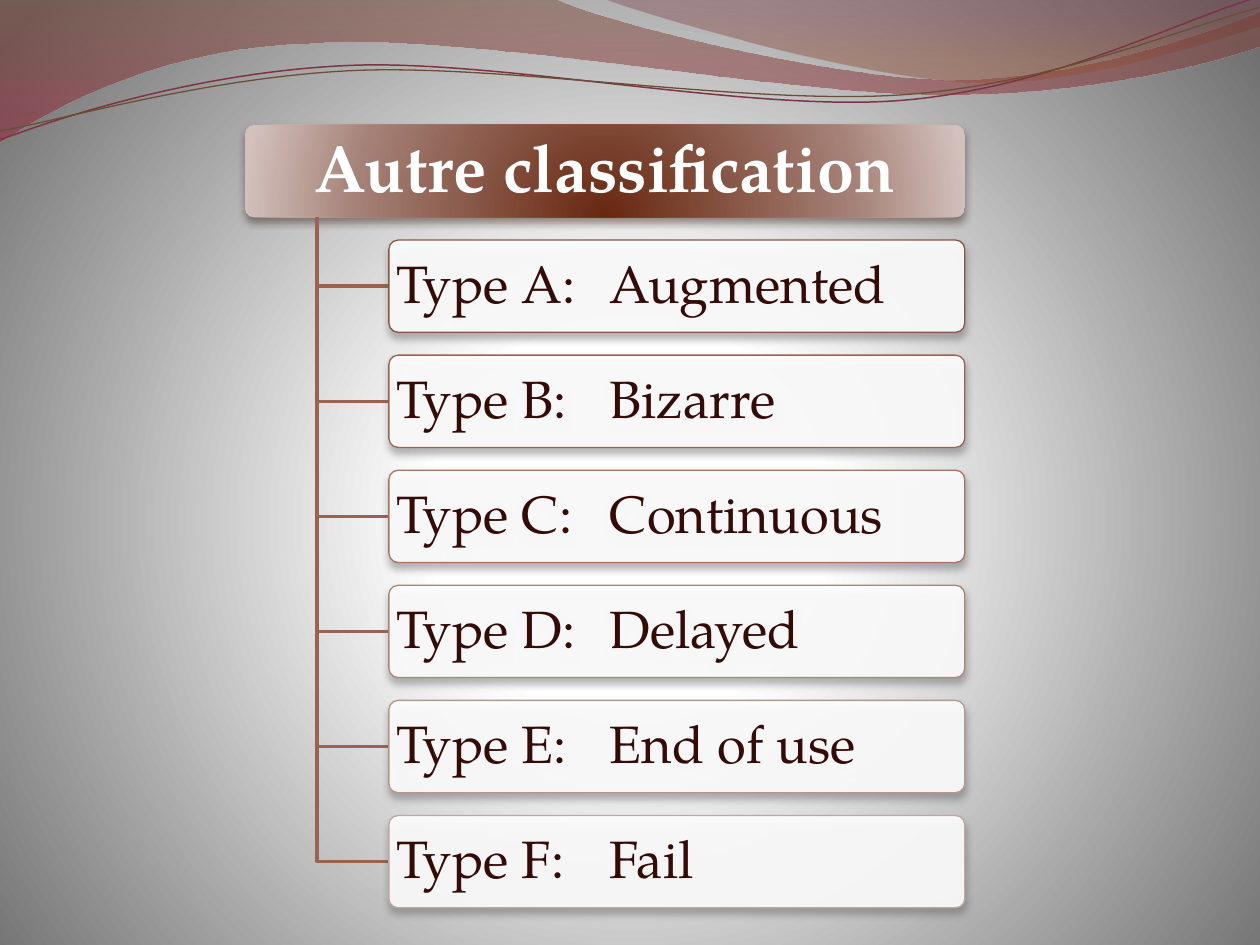
import pptx
import pptx.dml.color
import pptx.enum.shapes
import pptx.enum.text
import pptx.oxml
import pptx.oxml.ns
import pptx.util

Cm = pptx.util.Cm
Pt = pptx.util.Pt
RGBColor = pptx.dml.color.RGBColor
qn = pptx.oxml.ns.qn

WHITE = RGBColor(0xFF, 0xFF, 0xFF)
GREY = RGBColor(0x70, 0x70, 0x70)
INK = RGBColor(0x34, 0x0B, 0x07)
BRANCH = RGBColor(0x9A, 0x63, 0x4F)
HEADER_DARK = RGBColor(0x68, 0x28, 0x11)
HEADER_MID = RGBColor(0xA4, 0x80, 0x76)
HEADER_LIGHT = RGBColor(0xD3, 0xC1, 0xBD)
HEADER_SHADOW = RGBColor(0x31, 0x1E, 0x17)
BOX_SHADOW = RGBColor(0x5A, 0x5A, 0x5A)
WAVE_BROWN = RGBColor(0x76, 0x45, 0x31)
WAVE_RED = RGBColor(0x96, 0x21, 0x3A)
WAVE_PLUM = RGBColor(0x72, 0x22, 0x34)
WAVE_RUST = RGBColor(0x94, 0x4F, 0x34)
STRAND_RED = RGBColor(0x7D, 0x34, 0x44)
STRAND_BROWN = RGBColor(0x69, 0x4F, 0x36)

ROWS = [
    ("Type A:\tAugmented", RGBColor(0x8A, 0x57, 0x43)),
    ("Type B:\tBizarre", RGBColor(0x9A, 0x64, 0x50)),
    ("Type C:\tContinuous", RGBColor(0xA7, 0x73, 0x61)),
    ("Type D:\tDelayed", RGBColor(0xAE, 0x84, 0x77)),
    ("Type E:\tEnd of use", RGBColor(0xB6, 0x96, 0x8C)),
    ("Type F:\tFail", RGBColor(0xBF, 0xA7, 0xA1)),
]
BROAD_WAVE = [
    (0, 0), (11.18, -0.03),
    (12.09, 0.43, 16.87, 1.6, 19.25, 1.6), (21.67, 1.6, 24.33, 0.66, 25.4, 0.23),
    (25.43, 0.91), (24.97, 1.12, 22.1, 1.93, 18.95, 1.91),
    (15.8, 1.91, 9.7, 0.71, 6.53, 0.86), (3.28, 0.91, 1.17, 2.11, -0.03, 2.87),
]
RIGHT_WAVE = [
    (12.17, -0.03), (12.93, 0.28, 17.32, 1.57, 19.53, 1.65),
    (21.74, 1.75, 24.41, 0.81, 25.4, 0.53), (25.4, 0),
]
RED_STRAND = [
    (0, 2.82), (1.22, 2.36, 4.01, 1.45, 7.04, 1.32),
    (10.03, 1.19, 15.06, 2.26, 18.11, 2.03), (21.16, 1.8, 23.83, 0.38, 25.35, -0.05),
]
BROWN_STRAND = [
    (0, 2.64), (1.19, 2.44, 4.17, 1.55, 7.19, 1.42),
    (10.24, 1.3, 15.16, 2.13, 18.21, 1.91), (21.23, 1.7, 23.9, 0.53, 25.4, 0.15),
]
LEFT, TOP, WIDTH, HEIGHT, STEP = 4.94, 2.52, 14.51, 1.86, 2.32
TRUNK, BOX_LEFT, BOX_WIDTH = 6.39, 7.84, 11.61


def make_element(markup):
    """Return an element parsed from drawing markup."""
    namespace = pptx.oxml.ns.nsdecls("a")
    return pptx.oxml.parse_xml(markup.replace(">", f" {namespace}>", 1))


def color_markup(color, alpha):
    """Return colour markup with an opacity in percent."""
    return f'<a:srgbClr val="{color}"><a:alpha val="{alpha * 1000}"/></a:srgbClr>'


def set_gradient(holder, stops, focus=None):
    """Swap a solid fill for a vertical gradient, or a circular one around a focus."""
    marks = "".join(
        f'<a:gs pos="{place * 1000}">{color_markup(color, alpha)}</a:gs>'
        for place, color, alpha in stops
    )
    shade = '<a:lin ang="5400000" scaled="0"/>'
    if focus:
        sides = " ".join(f'{side}="{value * 1000}"' for side, value in zip("ltrb", focus))
        shade = f'<a:path path="circle"><a:fillToRect {sides}/></a:path>'
    gradient = make_element(
        f'<a:gradFill rotWithShape="1"><a:gsLst>{marks}</a:gsLst>{shade}</a:gradFill>'
    )
    holder.replace(holder.find(qn("a:solidFill")), gradient)


def set_text(frame, text, *, font, size, color, inset, bold=False, align="LEFT", tab=None):
    """Write one formatted paragraph into a text frame."""
    frame.word_wrap = True
    frame.auto_size = pptx.enum.text.MSO_AUTO_SIZE.NONE
    frame.vertical_anchor = pptx.enum.text.MSO_ANCHOR.MIDDLE
    frame.margin_left = frame.margin_right = Cm(inset)
    frame.margin_top = frame.margin_bottom = Cm(0.1)
    para = frame.paragraphs[0]
    para.alignment = pptx.enum.text.PP_ALIGN[align]
    para.line_spacing = 0.9
    if tab:
        para._p.get_or_add_pPr().append(make_element(
            f'<a:tabLst><a:tab pos="{Cm(tab)}" algn="l"/></a:tabLst>'
        ))
    span = para.add_run()
    span.text = text
    span.font.name = font
    span.font.size = Pt(size)
    span.font.bold = bold
    span.font.color.rgb = color


class Painter:
    """Hold the style and the current slide."""

    font = "TeX Gyre Pagella"

    def __init__(self, page):
        """Start on a slide."""
        self.page = page

    def background(self, stops, focus):
        """Fill the slide with a circular gradient."""
        self.page.background.fill.solid()
        set_gradient(self.page.element.find(".//" + qn("p:bgPr")), stops, focus)

    def outline(self, segments, closed):
        """Add a freeform of straight and cubic segments."""
        anchors = [(Cm(segment[-2]), Cm(segment[-1])) for segment in segments]
        builder = self.page.shapes.build_freeform(*anchors[0])
        builder.add_line_segments(anchors[1:], close=closed)
        shape = builder.convert_to_shape()
        shape.shadow.inherit = False
        lines = list(shape._element.iter(qn("a:lnTo")))
        for line, segment in zip(lines, segments[1:]):
            if len(segment) == 6:
                points = "".join(
                    f'<a:pt x="{Cm(x) - shape.left}" y="{Cm(y) - shape.top}"/>'
                    for x, y in zip(segment[::2], segment[1::2])
                )
                curve = make_element(f"<a:cubicBezTo>{points}</a:cubicBezTo>")
                line.getparent().replace(line, curve)
        return shape

    def wave(self, segments, stops):
        """Add a filled translucent wave."""
        shape = self.outline(segments, True)
        shape.line.fill.background()
        shape.fill.solid()
        set_gradient(shape._element.spPr, stops)

    def strand(self, segments, color, width):
        """Add an open line."""
        shape = self.outline(segments, False)
        shape.fill.background()
        shape.line.color.rgb = color
        shape.line.width = Pt(width)

    def plate(self, left, top, width, shadow):
        """Add a white rounded box with a soft shadow."""
        box = self.page.shapes.add_shape(
            pptx.enum.shapes.MSO_SHAPE.ROUNDED_RECTANGLE,
            Cm(left), Cm(top), Cm(width), Cm(HEIGHT),
        )
        box.adjustments[0] = 0.1
        box.fill.solid()
        box.fill.fore_color.rgb = WHITE
        box.line.fill.background()
        box.shadow.inherit = False
        box._element.spPr.find(qn("a:effectLst")).append(make_element(
            f'<a:outerShdw blurRad="{Pt(4.5)}" dist="{Pt(3)}" dir="5400000" '
            f'rotWithShape="0">{color_markup(shadow, 48)}</a:outerShdw>'
        ))
        return box

    def heading(self, text):
        """Add the gradient header and lay the title over it."""
        box = self.plate(LEFT, TOP, WIDTH, HEADER_SHADOW)
        stops = [(0, HEADER_DARK, 100), (68, HEADER_MID, 100), (100, HEADER_LIGHT, 100)]
        set_gradient(box._element.spPr, stops, (50, 130, 50, -30))
        title = self.page.shapes.title
        title.left, title.top, title.width, title.height = (
            box.left, box.top, box.width, box.height
        )
        set_text(title.text_frame, text, font=self.font, size=38, color=WHITE,
                 inset=0.2, bold=True, align="CENTER")
        box._element.addnext(title._element)

    def item(self, text, top, outline):
        """Add one outlined list box."""
        box = self.plate(BOX_LEFT, top, BOX_WIDTH, BOX_SHADOW)
        fill_color = box._element.spPr.find(qn("a:solidFill"))[0]
        fill_color.append(make_element('<a:alpha val="90000"></a:alpha>'))
        box.line.color.rgb = outline
        box.line.width = Pt(0.75)
        set_text(box.text_frame, text, font=self.font, size=30, color=INK, inset=0.1, tab=4.3)


def main():
    """Build the slide and save it."""
    deck = pptx.Presentation()
    deck.slide_width, deck.slide_height = Cm(25.4), Cm(19.05)
    painter = Painter(deck.slides.add_slide(deck.slide_layouts[5]))
    painter.background([(0, WHITE, 100), (25, WHITE, 100), (100, GREY, 100)], (10, 110, 10, 100))
    painter.wave(BROAD_WAVE, [(0, WAVE_BROWN, 45), (100, WAVE_RED, 55)])
    painter.wave(RIGHT_WAVE, [(0, WAVE_PLUM, 30), (80, WAVE_RUST, 45)])
    painter.strand(RED_STRAND, STRAND_RED, 0.85)
    painter.strand(BROWN_STRAND, STRAND_BROWN, 0.75)
    painter.heading("Autre classification")
    for number, (text, outline) in enumerate(ROWS, 1):
        top = TOP + STEP * number
        middle = top + HEIGHT / 2
        elbow = [(TRUNK, TOP + HEIGHT), (TRUNK, middle), (BOX_LEFT, middle)]
        painter.strand(elbow, BRANCH, 2)
        painter.item(text, top, outline)
    deck.save("out.pptx")


if __name__ == "__main__":
    main()
